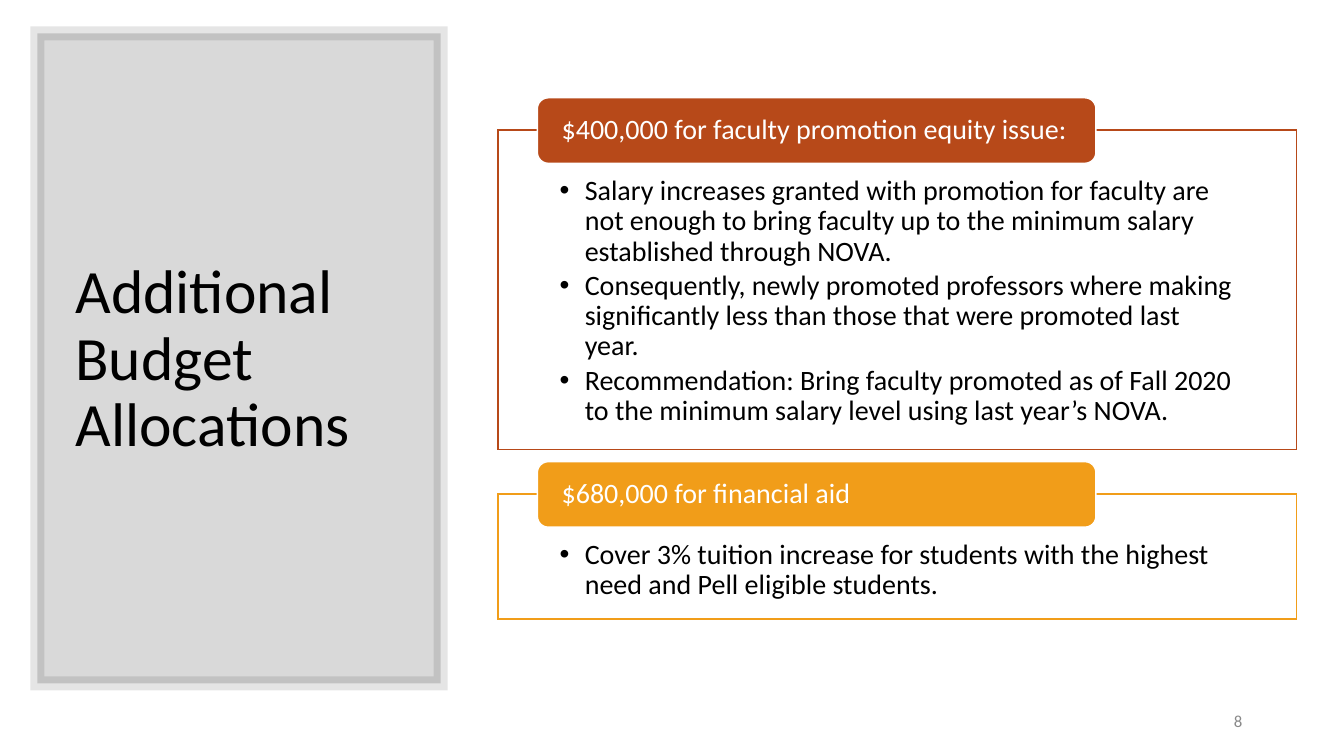
from lxml import etree
from pptx import Presentation
from pptx.dml.color import RGBColor
from pptx.enum.shapes import MSO_SHAPE
from pptx.enum.text import MSO_ANCHOR, PP_ALIGN
from pptx.oxml.ns import qn
from pptx.util import Emu, Pt

RECT, ROUNDED = MSO_SHAPE.RECTANGLE, MSO_SHAPE.ROUNDED_RECTANGLE
TOP, MIDDLE = MSO_ANCHOR.TOP, MSO_ANCHOR.MIDDLE
LEFT, RIGHT = PP_ALIGN.LEFT, PP_ALIGN.RIGHT
PX = 9144  # 100 px to the inch

COLORS = {"black": "000000", "white": "FFFFFF", "gray": "898989",
          "rust": "B74919", "amber": "F19D19"}

CARDS = [
    (129, 317, "rust", "$400,000 for faculty promotion equity issue:", [
        "Salary increases granted with promotion for faculty are not enough to bring "
        "faculty up to the minimum salary established through NOVA.",
        "Consequently, newly promoted professors where making significantly less than "
        "those that were promoted last year.",
        "Recommendation: Bring faculty promoted as of Fall 2020 to the minimum salary "
        "level using last year’s NOVA.",
    ]),
    (490, 124, "amber", "$680,000 for financial aid", [
        "Cover 3% tuition increase for students with the highest need and Pell "
        "eligible students.",
    ]),
]


def px(length):
    return Emu(length * PX)


def paint(fill, color, opacity=100):
    """Make a fill solid, with opacity in percent."""
    fill.solid()
    fill.fore_color.rgb = RGBColor.from_string(COLORS[color])
    if opacity < 100:
        tint = fill._xPr.find(".//" + qn("a:srgbClr"))
        etree.SubElement(tint, qn("a:alpha"), val=str(opacity * 1000))


def write(shape, paragraphs, size=20, color="black", align=LEFT, anchor=MIDDLE,
          insets=(10, 5, 10, 5), line_spacing=0.9, space_after=0, bullet=False):
    """Fill a shape with paragraphs; insets are left, top, right, bottom."""
    frame = shape.text_frame
    frame.word_wrap = True
    frame.vertical_anchor = anchor
    (frame.margin_left, frame.margin_top,
     frame.margin_right, frame.margin_bottom) = map(px, insets)
    for index, text in enumerate(paragraphs):
        para = frame.add_paragraph() if index else frame.paragraphs[0]
        para.alignment = align
        para.line_spacing = line_spacing
        para.space_after = Pt(space_after)
        if bullet:
            properties = para._p.get_or_add_pPr()
            properties.set("marL", str(px(25)))
            properties.set("indent", str(px(-25)))
            etree.SubElement(properties, qn("a:buFont"), typeface="Arial")
            etree.SubElement(properties, qn("a:buChar"), char="•")
        span = para.add_run()
        span.text = text
        span.font.name = "Calibri"
        span.font.size = Pt(size)
        span.font.color.rgb = RGBColor.from_string(COLORS[color])


class SlideBuilder:
    def __init__(self, page):
        self.page = page

    def box(self, kind, bounds, fill, line, width=1, fill_opacity=100, line_opacity=100):
        shape = self.page.shapes.add_shape(kind, *map(px, bounds))
        shape.shadow.inherit = False
        paint(shape.fill, fill, fill_opacity)
        shape.line.width = Pt(width)
        paint(shape.line.fill, line, line_opacity)
        outline = shape.line._get_or_add_ln()
        etree.SubElement(outline, qn("a:miter"), lim="800000")
        return shape

    def text(self, bounds, text, **style):
        write(self.page.shapes.add_textbox(*map(px, bounds)), [text], **style)

    def card(self, top, height, color, heading, points):
        body = self.box(RECT, (494, top, 792, height), "white", color, fill_opacity=90)
        write(body, points, anchor=TOP, insets=(61, 46, 61, 16),
              space_after=3, bullet=True)
        header = self.box(ROUNDED, (533, top - 32, 554, 65), color, "white")
        write(header, [heading], color="white", insets=(21, 0, 15, 0))


def main():
    deck = Presentation()
    deck.slide_width, deck.slide_height = px(1333), px(750)
    builder = SlideBuilder(deck.slides.add_slide(deck.slide_layouts[6]))
    builder.box(RECT, (37, 33, 400, 645), "black", "black", width=10,
                fill_opacity=15, line_opacity=10)
    builder.text((65, 70, 346, 575), "Additional Budget Allocations", size=44)
    builder.text((942, 695, 300, 40), "8", size=12, color="gray", align=RIGHT,
                 line_spacing=1.0, space_after=6)
    for card in CARDS:
        builder.card(*card)
    deck.save("out.pptx")


if __name__ == "__main__":
    main()
